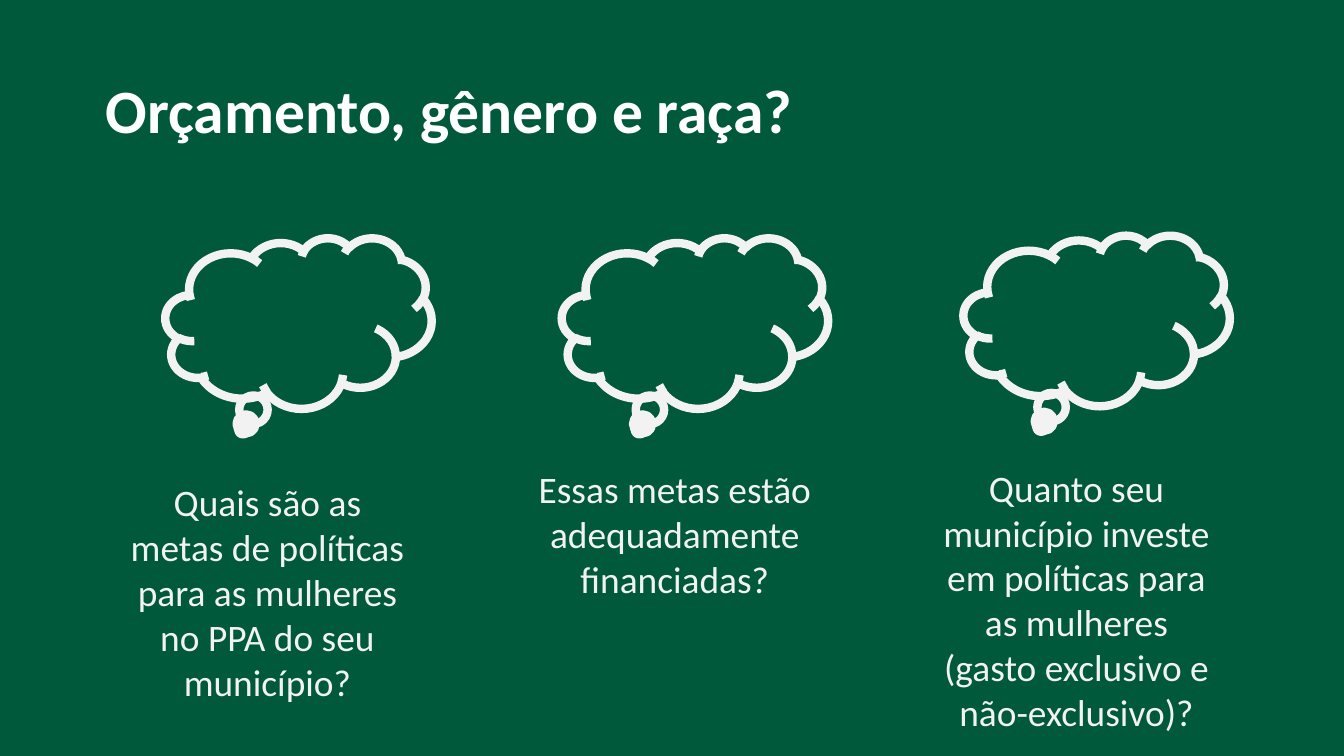
from pptx import Presentation
from pptx.dml.color import RGBColor
from pptx.enum.shapes import MSO_SHAPE
from pptx.enum.text import MSO_ANCHOR, MSO_AUTO_SIZE, PP_ALIGN
from pptx.util import Pt

GREEN, WHITE, PALE = "00593B", "FFFFFF", "F2F2F2"

# question, text left, text top, text height, cloud left, cloud top
ITEMS = [
    ("Quais são as metas de políticas para as mulheres no PPA do seu município?",
     61.2, 253.4, 128.2, 88.6, 127.4),
    ("Essas metas estão adequadamente financiadas?",
     279.4, 246.2, 79.9, 301, 127.4),
    ("Quanto seu município investe em políticas para as mulheres "
     "(gasto exclusivo e não-exclusivo)?",
     494.6, 245.5, 152.6, 516.2, 126),
]


def color(code):
    return RGBColor.from_string(code)


class Deck:
    """Holds the style and the current slide."""

    font = "Calibri"

    def __init__(self, slide):
        self.slide = slide
        fill = slide.background.fill
        fill.solid()
        fill.fore_color.rgb = color(GREEN)

    def run(self, para, text, size, code, bold=False):
        run = para.add_run()
        run.text = text
        run.font.name = self.font
        run.font.size = Pt(size)
        run.font.bold = bold
        run.font.color.rgb = color(code)

    def title(self, text, left, top, width, height):
        shape = self.slide.shapes.title
        shape.left, shape.top = Pt(left), Pt(top)
        shape.width, shape.height = Pt(width), Pt(height)
        frame = shape.text_frame
        frame.word_wrap = True
        frame.vertical_anchor = MSO_ANCHOR.MIDDLE
        para = frame.paragraphs[0]
        para.alignment = PP_ALIGN.LEFT
        para.line_spacing = 0.9
        self.run(para, text, 33, WHITE, True)

    def label(self, text, left, top, width, height):
        box = self.slide.shapes.add_textbox(Pt(left), Pt(top), Pt(width), Pt(height))
        frame = box.text_frame
        frame.word_wrap = True
        frame.auto_size = MSO_AUTO_SIZE.SHAPE_TO_FIT_TEXT
        para = frame.paragraphs[0]
        para.alignment = PP_ALIGN.CENTER
        self.run(para, text, 20, PALE)

    def cloud(self, left, top, width, height):
        shape = self.slide.shapes.add_shape(
            MSO_SHAPE.CLOUD_CALLOUT, Pt(left), Pt(top), Pt(width), Pt(height))
        shape.shadow.inherit = False
        shape.fill.background()
        shape.line.color.rgb = color(PALE)
        shape.line.width = Pt(4.5)


def main():
    prs = Presentation()
    prs.slide_width, prs.slide_height = Pt(720), Pt(405)
    deck = Deck(prs.slides.add_slide(prs.slide_layouts[5]))
    deck.title("Orçamento, gênero e raça?", 49.5, 21.6, 621, 78.3)
    for text, left, top, height, cloud_x, cloud_y in ITEMS:
        deck.label(text, left, top, 164.2, height)
        deck.cloud(cloud_x, cloud_y, 142.6, 91.4)
    prs.save("out.pptx")


if __name__ == "__main__":
    main()
